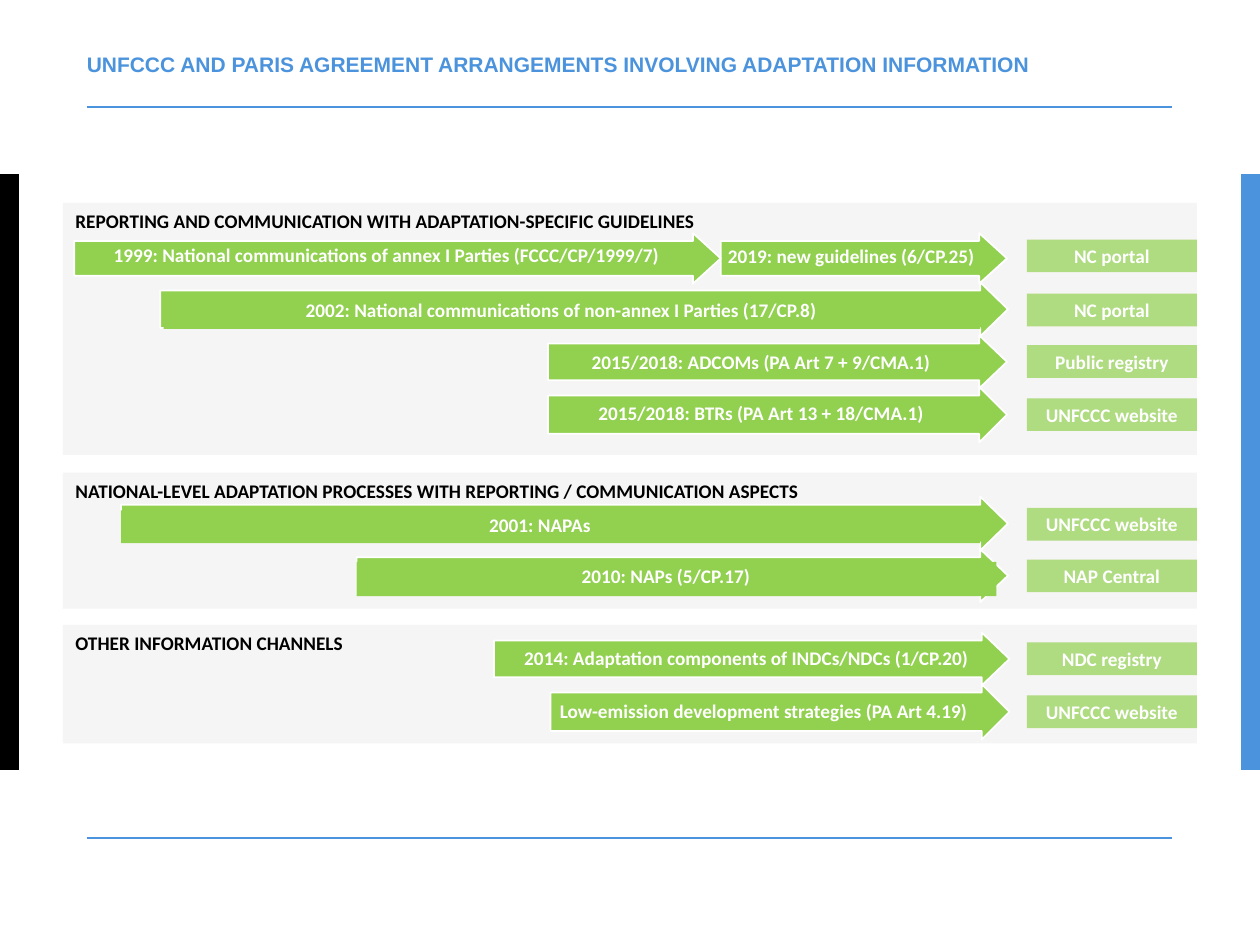
from dataclasses import dataclass

from lxml import etree
from pptx import Presentation
from pptx.dml.color import RGBColor
from pptx.enum.shapes import MSO_CONNECTOR, MSO_SHAPE
from pptx.enum.text import MSO_ANCHOR, PP_ALIGN
from pptx.oxml.ns import qn
from pptx.util import Cm, Pt

RECT, ARROW = MSO_SHAPE.RECTANGLE, MSO_SHAPE.RIGHT_ARROW
STRAIGHT = MSO_CONNECTOR.STRAIGHT
TOP, MIDDLE = MSO_ANCHOR.TOP, MSO_ANCHOR.MIDDLE
LEFT, CENTER = PP_ALIGN.LEFT, PP_ALIGN.CENTER


@dataclass(frozen=True)
class Theme:
    black: str = "000000"
    white: str = "FFFFFF"
    blue: str = "4B93DC"
    green: str = "92D050"
    grey: str = "E7E6E6"
    title_font: str = "Arial"
    body_font: str = "Calibri"
    title_size: int = 12
    body_size: int = 11


def write(sp, text, *, font, size, color, align=LEFT, anchor=TOP,
          insets=(0.25, 0.13, 0.25, 0.13), spacing=None):
    tf = sp.text_frame
    tf.word_wrap = True
    tf.vertical_anchor = anchor
    tf.margin_left, tf.margin_top, tf.margin_right, tf.margin_bottom = map(Cm, insets)
    p = tf.paragraphs[0]
    p.alignment = align
    if spacing:
        p.line_spacing = spacing
    r = p.add_run()
    r.text = text
    r.font.name = font
    r.font.size = Pt(size)
    r.font.bold = True
    r.font.color.rgb = RGBColor.from_string(color)


class SlideBuilder:
    HEAD_LENGTH = 0.56
    SHAFT = 0.69

    def __init__(self, slide, theme):
        self.s = slide
        self.t = theme

    def block(self, x, y, w, h, color, opacity=100, kind=RECT):
        sp = self.s.shapes.add_shape(kind, Cm(x), Cm(y), Cm(w), Cm(h))
        sp.shadow.inherit = False
        sp.fill.solid()
        sp.fill.fore_color.rgb = RGBColor.from_string(color)
        sp.line.fill.background()
        if opacity < 100:
            clr = sp.fill._xPr.find(qn("a:solidFill")).find(qn("a:srgbClr"))
            etree.SubElement(clr, qn("a:alpha"), val=str(opacity * 1000))
        return sp

    def rule(self, y):
        c = self.s.shapes.add_connector(STRAIGHT, Cm(1.75), Cm(y), Cm(23.62), Cm(y))
        c.line.color.rgb = RGBColor.from_string(self.t.blue)
        c.line.width = Pt(1)
        etree.SubElement(c._element.spPr, qn("a:effectLst"))

    def title(self, text):
        sp = self.s.shapes.add_textbox(Cm(1.75), Cm(0.86), Cm(21.87), Cm(0.86))
        write(sp, text, font=self.t.title_font, size=self.t.title_size,
              color=self.t.blue, anchor=MIDDLE, insets=(0, 0, 0, 0), spacing=Pt(15))

    def panel(self, y, h, text):
        sp = self.block(1.27, y, 22.86, h, self.t.grey, opacity=36)
        write(sp, text, font=self.t.body_font, size=self.t.body_size, color=self.t.black)

    def arrow(self, x, y, w, h):
        sp = self.block(x, y, w, h, self.t.green, kind=ARROW)
        sp.adjustments[0] = self.SHAFT
        sp.adjustments[1] = self.HEAD_LENGTH / h
        sp.line.color.rgb = RGBColor.from_string(self.t.white)
        sp.line.width = Pt(1)

    def label(self, x, y, w, h, text, filled):
        if filled:
            sp = self.block(x, y, w, h, self.t.green)
        else:
            sp = self.s.shapes.add_textbox(Cm(x), Cm(y), Cm(w), Cm(h))
        write(sp, text, font=self.t.body_font, size=self.t.body_size,
              color=self.t.white, align=CENTER, insets=(0.1, 0.1, 0.53, 0.38), spacing=0.9)

    def tag(self, y, text):
        sp = self.block(20.7, y, 3.43, 0.66, self.t.green, opacity=70)
        write(sp, text, font=self.t.body_font, size=self.t.body_size,
              color=self.t.white, align=CENTER, anchor=MIDDLE)


PANELS = [
    (4.09, 5.08, "REPORTING AND COMMUNICATION WITH ADAPTATION-SPECIFIC GUIDELINES"),
    (9.53, 2.74, "NATIONAL-LEVEL ADAPTATION PROCESSES WITH REPORTING / COMMUNICATION ASPECTS"),
    (12.6, 2.39, "OTHER INFORMATION CHANNELS"),
]

# arrow box, label box, label text, label filled
ARROWS = [
    ((14.53, 4.7, 5.77, 1.02), (14.53, 4.9, 5.69, 0.64),
     "2019: new guidelines (6/CP.25)", False),
    ((1.5, 4.7, 13.03, 1.02), (1.57, 4.88, 12.88, 0.56),
     "1999: National communications of annex I Parties (FCCC/CP/1999/7)", False),
    ((3.23, 5.69, 17.09, 1.09), (3.3, 5.97, 16.46, 0.66),
     "2002: National communications of non-annex I Parties (17/CP.8)", True),
    ((11.05, 6.76, 9.25, 1.07), (11.05, 7.04, 9.02, 0.66),
     "2015/2018: ADCOMs (PA Art 7 + 9/CMA.1)", False),
    ((11.05, 7.8, 9.25, 1.12), (11.1, 8.08, 8.92, 0.69),
     "2015/2018: BTRs (PA Art 13 + 18/CMA.1)", False),
    ((2.44, 10.01, 17.88, 1.09), (2.44, 10.29, 17.32, 0.66),
     "2001: NAPAs", True),
    ((7.19, 11.07, 13.13, 1.07), (7.19, 11.33, 12.9, 0.69),
     "2010: NAPs (5/CP.17)", True),
    ((9.96, 12.75, 10.39, 1.07), (10.39, 13, 9.75, 0.66),
     "2014: Adaptation components of INDCs/NDCs (1/CP.20)", False),
    ((11.1, 13.79, 9.25, 1.12), (11.15, 14.07, 8.92, 0.69),
     "Low-emission development strategies (PA Art 4.19)", False),
]

TAGS = [
    (4.83, "NC portal"),
    (5.92, "NC portal"),
    (6.96, "Public registry"),
    (8.03, "UNFCCC website"),
    (10.24, "UNFCCC website"),
    (11.28, "NAP Central"),
    (12.95, "NDC registry"),
    (14.02, "UNFCCC website"),
]


def main():
    prs = Presentation()
    prs.slide_width, prs.slide_height = Cm(25.4), Cm(19.05)
    theme = Theme()
    b = SlideBuilder(prs.slides.add_slide(prs.slide_layouts[6]), theme)

    for x, color in ((0, theme.black), (25.02, theme.blue)):
        b.block(x, 3.51, 0.38, 12.01, color)
    for y in (2.16, 16.89):
        b.rule(y)
    b.title("UNFCCC AND PARIS AGREEMENT ARRANGEMENTS INVOLVING ADAPTATION INFORMATION")

    for panel in PANELS:
        b.panel(*panel)
    for arrow_box, label_box, text, filled in ARROWS:
        b.arrow(*arrow_box)
        b.label(*label_box, text, filled)
    for tag in TAGS:
        b.tag(*tag)

    prs.save("out.pptx")


if __name__ == "__main__":
    main()
